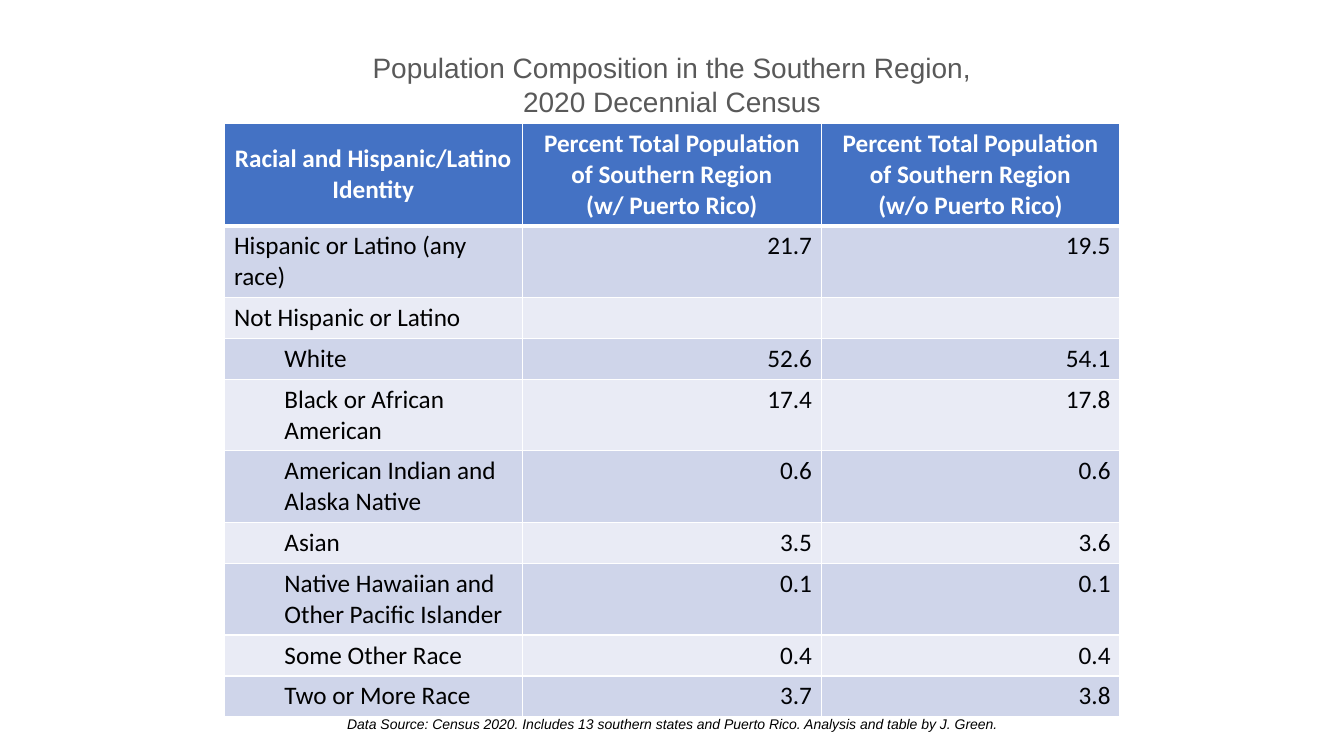
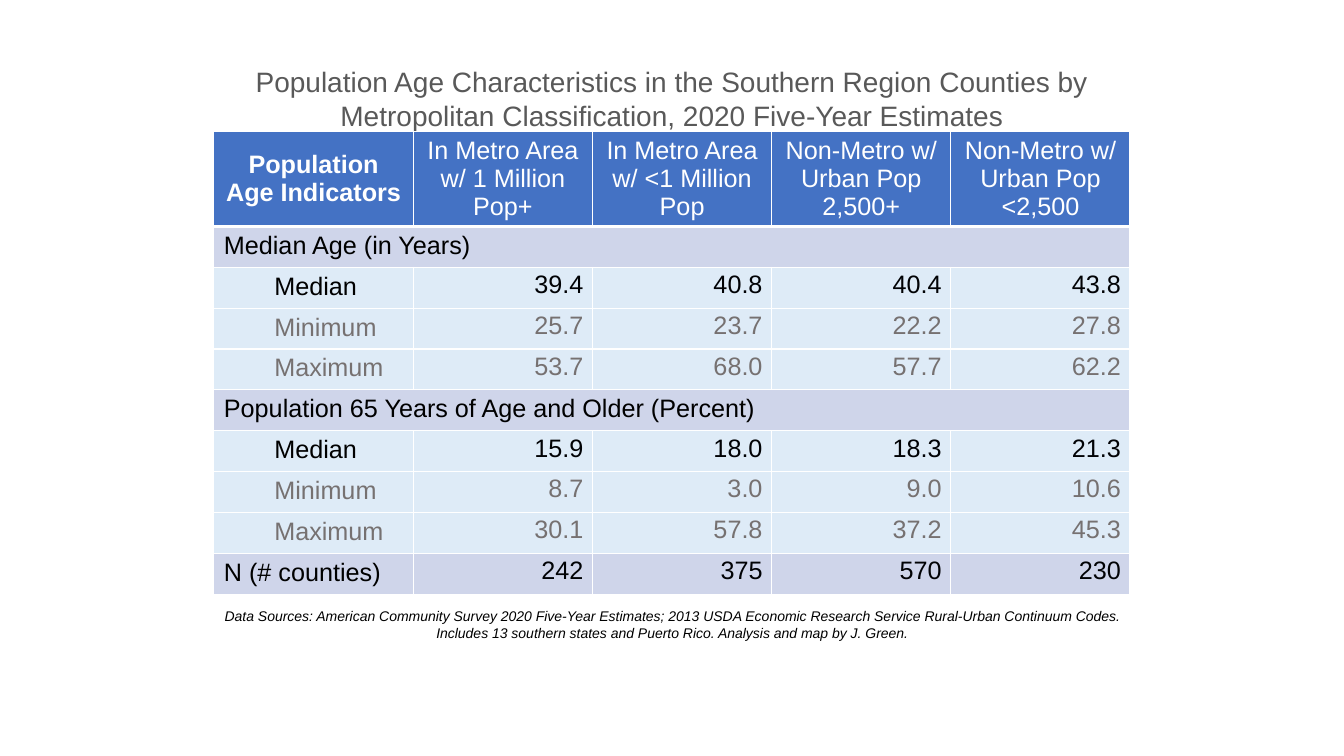
from lxml import etree
from pptx import Presentation
from pptx.dml.color import RGBColor
from pptx.enum.text import MSO_ANCHOR, MSO_AUTO_SIZE, PP_ALIGN
from pptx.oxml.ns import qn
from pptx.util import Pt

TOP, MIDDLE = MSO_ANCHOR.TOP, MSO_ANCHOR.MIDDLE
LEFT, CENTER, RIGHT = PP_ALIGN.LEFT, PP_ALIGN.CENTER, PP_ALIGN.RIGHT
FIT_NONE = MSO_AUTO_SIZE.NONE

WIDE, HIGH = 960, 540
SPAN = 654.5
EDGE = (WIDE - SPAN) / 2
WHITE, BLACK, INK, GREY = "FFFFFF", "000000", "010205", "767171"
BLUE, BAND, PALE, SKY = "4472C4", "CFD5EA", "E9EBF5", "DEEBF7"
TITLE = {"name": "Arial", "size": Pt(20), "bold": False}
NOTE = {"name": "Arial", "size": Pt(10), "italic": True}
ROW = 29.2
INDENT = 43.2

RACE_HEAD = [
    "Racial and Hispanic/Latino Identity",
    "Percent Total Population of Southern Region\n(w/ Puerto Rico)",
    "Percent Total Population of Southern Region\n(w/o Puerto Rico)",
]
# text lines, indented, label and values
RACES = [
    (2, False, ["Hispanic or Latino (any race)", "21.7", "19.5"]),
    (1, False, ["Not Hispanic or Latino", "", ""]),
    (1, True, ["White", "52.6", "54.1"]),
    (2, True, ["Black or African American", "17.4", "17.8"]),
    (2, True, ["American Indian and Alaska Native", "0.6", "0.6"]),
    (1, True, ["Asian", "3.5", "3.6"]),
    (2, True, ["Native Hawaiian and Other Pacific Islander", "0.1", "0.1"]),
    (1, True, ["Some Other Race", "0.4", "0.4"]),
    (1, True, ["Two or More Race", "3.7", "3.8"]),
]
AGE_HEAD = [
    "Population Age Indicators",
    "In Metro Area w/ 1 Million Pop+",
    "In Metro Area w/ <1 Million Pop",
    "Non-Metro w/ Urban Pop 2,500+",
    "Non-Metro w/ Urban Pop\n<2,500",
]
AGES = [
    ["Median Age (in Years)"],
    ["Median", "39.4", "40.8", "40.4", "43.8"],
    ["Minimum", "25.7", "23.7", "22.2", "27.8"],
    ["Maximum", "53.7", "68.0", "57.7", "62.2"],
    ["Population 65 Years of Age and Older (Percent)"],
    ["Median", "15.9", "18.0", "18.3", "21.3"],
    ["Minimum", "8.7", "3.0", "9.0", "10.6"],
    ["Maximum", "30.1", "57.8", "37.2", "45.3"],
    ["N (# counties)", "242", "375", "570", "230"],
]


def color(code):
    return RGBColor.from_string(code)


def write(frame, text, font, ink, align, space=1.0):
    frame.text = text
    for para in frame.paragraphs:
        para.alignment = align
        para.line_spacing = space
        for run in para.runs:
            for key, value in font.items():
                setattr(run.font, key, value)
            run.font.color.rgb = color(ink)


def place(shape, top, height):
    """Put a text shape in the shared centre column."""
    shape.left, shape.top = Pt(EDGE), Pt(top)
    shape.width, shape.height = Pt(SPAN), Pt(height)
    frame = shape.text_frame
    frame.word_wrap = True
    frame.auto_size = FIT_NONE
    frame.vertical_anchor = TOP
    return frame


def add_title(slide, text, top):
    write(place(slide.shapes.title, top, 55.4), text, TITLE, "595959", CENTER)


def add_note(slide, text, top, height):
    box = slide.shapes.add_textbox(0, 0, 0, 0)
    write(place(box, top, height), text, NOTE, BLACK, CENTER)


def rule(cell, **sides):
    """Draw white borders, each as wide as given in points."""
    props = cell._tc.get_or_add_tcPr()
    for side in "LRTB":
        line = etree.SubElement(props, qn(f"a:ln{side}"), w=str(Pt(sides.get(side, 1))))
        fill = etree.SubElement(line, qn("a:solidFill"))
        etree.SubElement(fill, qn("a:srgbClr"), val=WHITE)


def add_grid(slide, left, top, cols, face, head, rows, space=1.0):
    """Rows hold height, fill, ink, label inset and texts; a lone text spans its row."""
    rows = [head] + rows
    grid = slide.shapes.add_table(
        len(rows), len(cols), Pt(left), Pt(top),
        Pt(sum(cols)), Pt(sum(row[0] for row in rows))).table
    for col, width in zip(grid.columns, cols):
        col.width = Pt(width)
    for r, (height, fill, ink, inset, texts) in enumerate(rows):
        grid.rows[r].height = Pt(height)
        for c in range(len(cols)):
            cell = grid.cell(r, c)
            rule(cell, T=3 if r == 1 else 1, B=3 if r == 0 else 1)
            cell.fill.solid()
            cell.fill.fore_color.rgb = color(fill)
        if len(texts) == 1:
            grid.cell(r, 0).merge(grid.cell(r, len(cols) - 1))
        for c, text in enumerate(texts):
            cell = grid.cell(r, c)
            font = {"name": face, "size": Pt(18), "bold": r == 0 and (c == 0 or face == "Calibri")}
            if r == 0:
                cell.vertical_anchor = MIDDLE
                write(cell.text_frame, text, font, ink, CENTER)
            elif c == 0:
                cell.margin_left = Pt(inset)
                write(cell.text_frame, text, font, ink, LEFT)
            else:
                cell.vertical_anchor = TOP if space == 1 else MIDDLE
                cell.margin_right = Pt(6.6)
                write(cell.text_frame, text, font, INK if ink == BLACK else ink, RIGHT, space)


def race_slide(slide):
    add_title(slide, "Population Composition in the Southern Region,\n2020 Decennial Census", 32.4)
    rows = [(ROW if lines == 1 else 51, PALE if i % 2 else BAND, BLACK,
             INDENT if inner else 7.2, texts)
            for i, (lines, inner, texts) in enumerate(RACES)]
    add_grid(slide, 160, 88.2, [213.3] * 3, "Calibri",
             (72.5, BLUE, WHITE, 7.2, RACE_HEAD), rows)
    add_note(slide, "Data Source: Census 2020. Includes 13 southern states and Puerto Rico. "
             "Analysis and table by J. Green.", 507.6, 19.4)


def age_slide(slide):
    add_title(slide, "Population Age Characteristics in the Southern Region Counties by "
              "Metropolitan Classification, 2020 Five-Year Estimates", 42.5)
    rows = []
    for texts in AGES:
        inner = texts[0] in ("Median", "Minimum", "Maximum")
        ink = GREY if texts[0] in ("Minimum", "Maximum") else BLACK
        rows.append((ROW, SKY if inner else BAND, ink, INDENT if inner else 7.2, texts))
    add_grid(slide, EDGE, 94, [142.5] + [128] * 4, "Arial",
             (67, BLUE, WHITE, 7.2, AGE_HEAD), rows, Pt(16))
    add_note(slide, "Data Sources: American Community Survey 2020 Five-Year Estimates; "
             "2013 USDA Economic Research Service Rural-Urban Continuum Codes. "
             "Includes 13 southern states and Puerto Rico. Analysis and map by J. Green.",
             430.6, 31.7)


def main():
    deck = Presentation()
    deck.slide_width, deck.slide_height = Pt(WIDE), Pt(HIGH)
    for build in (race_slide, age_slide):
        build(deck.slides.add_slide(deck.slide_layouts[5]))
    deck.save("out.pptx")


if __name__ == "__main__":
    main()
